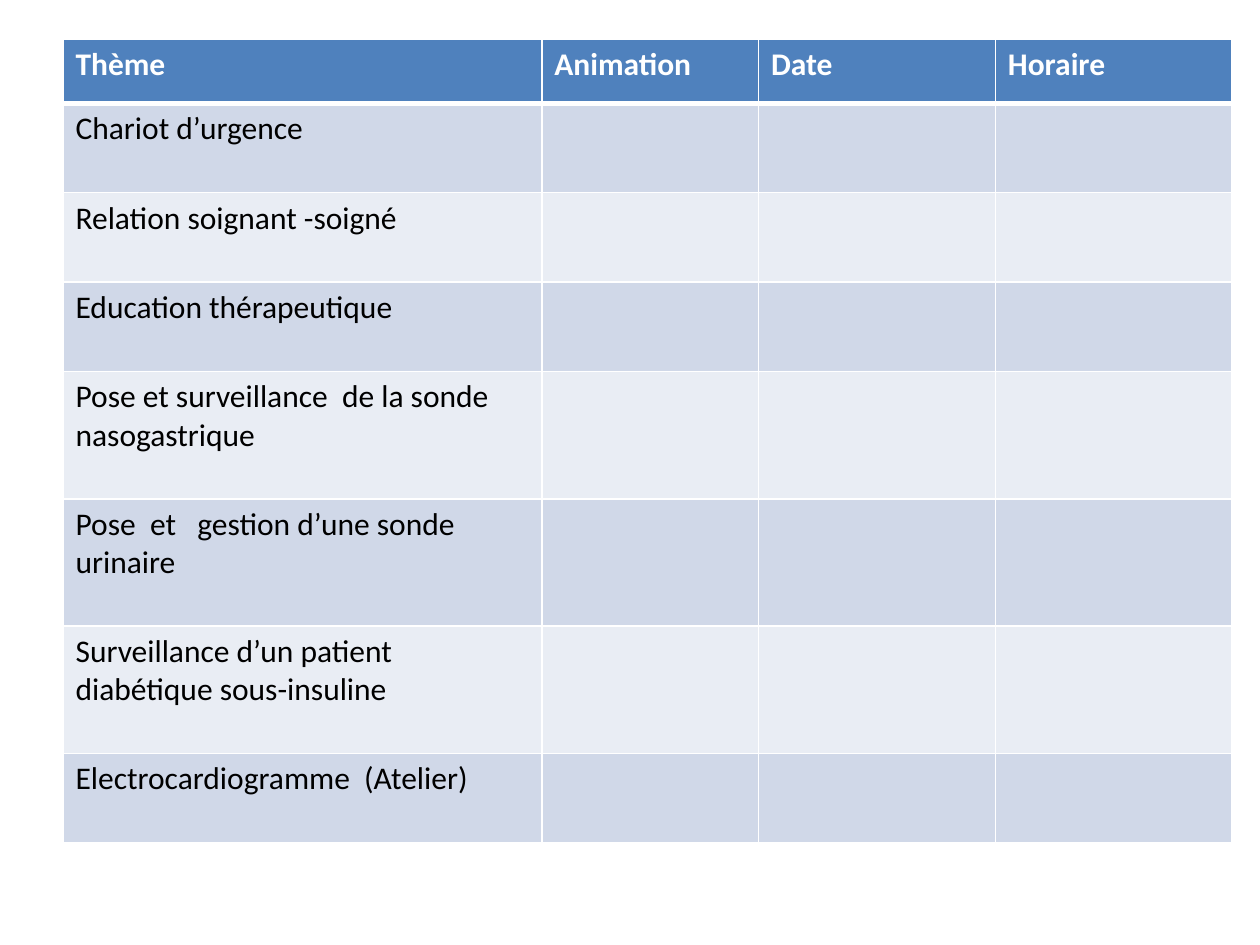
import pptx
import pptx.util
import pptx.dml.color
import pptx.oxml.ns
from lxml import etree
from pptx.util import Inches

HEADERS = ["Thème", "Animation", "Date", "Horaire"]
THEMES = [
    "Chariot d’urgence",
    "Relation soignant -soigné",
    "Education thérapeutique",
    "Pose et surveillance  de la sonde nasogastrique",
    "Pose  et   gestion d’une sonde urinaire",
    "Surveillance d’un patient diabétique sous-insuline",
    "Electrocardiogramme  (Atelier)",
]
COL_WIDTHS = [3.8, 1.72, 1.88, 1.88]
ROW_HEIGHTS = [0.51] + [0.71] * 3 + [1.01] * 3 + [0.71]
HEADER_FILL = "4F81BD"
BAND_FILLS = ["D0D8E8", "E9EDF4"]


def color(value):
    return pptx.dml.color.RGBColor.from_string(value)


def write(tf, text, size=18, fill="000000", bold=False):
    p = tf.paragraphs[0]
    p.font.size = pptx.util.Pt(size)
    if text:
        r = p.add_run()
        r.text = text
        r.font.name = "Calibri"
        r.font.size = pptx.util.Pt(size)
        r.font.bold = bold
        r.font.color.rgb = color(fill)


def add_border(cell, side, width, value="FFFFFF"):
    qn = pptx.oxml.ns.qn
    tc_pr = cell._tc.get_or_add_tcPr()
    ln = etree.SubElement(tc_pr, qn(f"a:ln{side}"), w=str(pptx.util.Pt(width)))
    fill = etree.SubElement(ln, qn("a:solidFill"))
    etree.SubElement(fill, qn("a:srgbClr"), val=value)


def format_cell(cell, fill, top=1, bottom=1):
    for side, width in {"L": 1, "R": 1, "T": top, "B": bottom}.items():
        add_border(cell, side, width)
    cell.fill.solid()
    cell.fill.fore_color.rgb = color(fill)


def add_schedule(s):
    rows = [HEADERS] + [[theme, "", "", ""] for theme in THEMES]
    frame = s.shapes.add_table(
        len(rows), len(HEADERS), Inches(0.5), Inches(0.31),
        Inches(sum(COL_WIDTHS)), Inches(sum(ROW_HEIGHTS)))
    table = frame.table
    for col, width in zip(table.columns, COL_WIDTHS):
        col.width = Inches(width)
    for i, (row, height) in enumerate(zip(table.rows, ROW_HEIGHTS)):
        row.height = Inches(height)
        for cell, text in zip(row.cells, rows[i]):
            if i == 0:
                format_cell(cell, HEADER_FILL, bottom=3)
                write(cell.text_frame, text, fill="FFFFFF", bold=True)
            else:
                format_cell(cell, BAND_FILLS[(i - 1) % 2], top=3 if i == 1 else 1)
                write(cell.text_frame, text)


def main():
    prs = pptx.Presentation()
    prs.slide_width = Inches(10)
    prs.slide_height = Inches(7.5)
    s = prs.slides.add_slide(prs.slide_layouts[6])
    add_schedule(s)
    prs.save("out.pptx")


if __name__ == "__main__":
    main()
